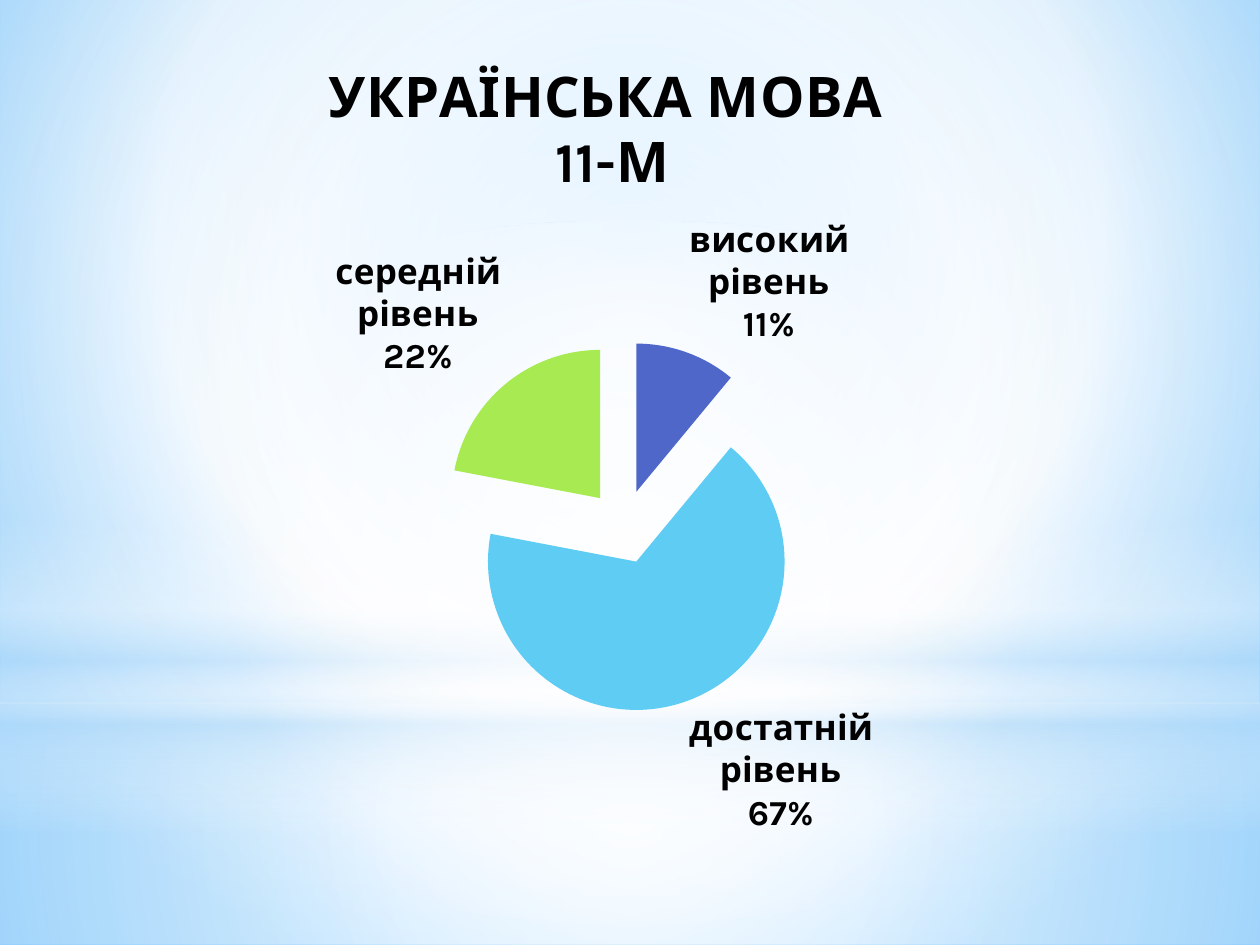
from dataclasses import dataclass

from lxml.etree import SubElement
from pptx import Presentation
from pptx.chart.data import CategoryChartData
from pptx.dml.color import RGBColor
from pptx.enum.chart import XL_CHART_TYPE, XL_LABEL_POSITION
from pptx.enum.shapes import MSO_SHAPE
from pptx.oxml.ns import qn
from pptx.util import Inches, Pt


@dataclass(frozen=True)
class Theme:
    font: str = "Karla"
    ink: str = "000000"
    white: str = "FFFFFF"
    haze: str = "B4DCFA"
    sky: str = "9ED5FF"
    edge: str = "5BB9FF"
    slices: tuple = ("4E67C8", "5ECCF3", "A7EA52")
    base_size: int = 10
    label_size: int = 20
    title_size: int = 32


def add_value(parent, tag, value):
    return SubElement(parent, qn(tag), val=str(value))


class SlideBuilder:
    """Holds the theme and the current slide and draws each kind of element."""

    def __init__(self, theme, slide):
        self.theme = theme
        self.slide = slide

    def style(self, font, size, bold):
        font.name = self.theme.font
        font.size = Pt(size)
        font.bold = bold
        font.color.rgb = RGBColor.from_string(self.theme.ink)

    def paint(self, fill, owner, stops, focus=None):
        fill.gradient()
        gradient = owner.find(".//" + qn("a:gradFill"))
        for child in list(gradient):
            gradient.remove(child)
        stop_list = SubElement(gradient, qn("a:gsLst"))
        for position, color, opacity in stops:
            stop = SubElement(stop_list, qn("a:gs"), pos=str(position * 1000))
            tone = add_value(stop, "a:srgbClr", color)
            if opacity < 100:
                add_value(tone, "a:alpha", opacity * 1000)
        if focus:
            sweep = SubElement(gradient, qn("a:path"), path="circle")
            edges = {side: str(inset * 1000) for side, inset in zip("ltrb", focus)}
            SubElement(sweep, qn("a:fillToRect"), **edges)
        else:
            SubElement(gradient, qn("a:lin"), ang="5400000", scaled="0")

    def background(self, stops, focus):
        self.paint(self.slide.background.fill, self.slide.element, stops, focus)

    def glow(self, outline, top, height, stops, focus=None):
        band = self.slide.shapes.add_shape(
            outline, Inches(0), Inches(top), Inches(10), Inches(height))
        band.shadow.inherit = False
        band.line.fill.background()
        self.paint(band.fill, band.element, stops, focus)

    def pie(self, box, title_lines, levels, plot_box):
        data = CategoryChartData()
        data.categories = list(levels)
        data.add_series("Series 1", list(levels.values()))
        chart = self.slide.shapes.add_chart(
            XL_CHART_TYPE.PIE, *map(Inches, box), data).chart
        self.style(chart.font, self.theme.base_size, False)
        chart.has_legend = False
        self.chart_title(chart, title_lines)
        plot = chart.plots[0]
        plot.vary_by_categories = True
        series = plot.series[0]
        for index, color in enumerate(self.theme.slices):
            fill = series.points[index].format.fill
            fill.solid()
            fill.fore_color.rgb = RGBColor.from_string(color)
        explosion = add_value(series._element, "c:explosion", 25)
        series._element.find(qn("c:dPt")).addprevious(explosion)
        self.pie_labels(series)
        self.place_plot(chart, plot_box)

    def chart_title(self, chart, lines):
        chart.has_title = True
        frame = chart.chart_title.text_frame
        chart.chart_title.include_in_layout = False
        for index, line in enumerate(lines):
            paragraph = frame.add_paragraph() if index else frame.paragraphs[0]
            run = paragraph.add_run()
            run.text = line
            self.style(run.font, self.theme.title_size, True)

    def pie_labels(self, series):
        labels = series.data_labels
        self.style(labels.font, self.theme.label_size, True)
        labels.show_value = False
        labels.show_category_name = True
        labels.show_percentage = True
        labels.number_format = "0%"
        labels.number_format_is_linked = False
        labels.position = XL_LABEL_POSITION.OUTSIDE_END
        separator = SubElement(labels._element, qn("c:separator"))
        separator.text = "\n"
        labels._element.find(qn("c:showBubbleSize")).addnext(separator)

    def place_plot(self, chart, plot_box):
        area = chart.element.find(".//" + qn("c:plotArea"))
        for old in area.findall(qn("c:layout")):
            area.remove(old)
        layout = SubElement(area, qn("c:layout"))
        area.insert(0, layout)
        manual = SubElement(layout, qn("c:manualLayout"))
        add_value(manual, "c:layoutTarget", "inner")
        for mode in ("xMode", "yMode"):
            add_value(manual, "c:" + mode, "edge")
        for name, value in zip("xywh", plot_box):
            add_value(manual, "c:" + name, value)


def main():
    presentation = Presentation()
    presentation.slide_width, presentation.slide_height = Inches(10), Inches(7.5)
    theme = Theme()
    slide = presentation.slides.add_slide(presentation.slide_layouts[6])
    builder = SlideBuilder(theme, slide)
    white, haze = theme.white, theme.haze
    center = (50, 50, 50, 50)
    builder.background(
        [(0, theme.sky, 100), (60, white, 100), (100, theme.edge, 100)],
        (20, 10, 20, 60))
    builder.glow(MSO_SHAPE.RECTANGLE, 5.58, 1.92,
                 [(0, white, 91), (37, white, 76), (100, haze, 79)], center)
    builder.glow(MSO_SHAPE.RECTANGLE, 0, 5.58,
                 [(0, white, 89), (48, white, 62), (100, haze, 79)], center)
    builder.glow(MSO_SHAPE.RECTANGLE, 4.12, 2.5,
                 [(0, white, 0), (29, white, 30), (45, haze, 40),
                  (55, white, 26), (65, haze, 60), (100, white, 0)])
    builder.glow(MSO_SHAPE.OVAL, 1.75, 5.58,
                 [(0, white, 100), (56, white, 0)], center)
    builder.pie(
        (0.51, 0.29, 8.71, 6.54),
        ("УКРАЇНСЬКА МОВА ", "11-М"),
        {"високий рівень": 11, "достатній рівень": 67, "середній рівень": 22},
        (0.34, 0.37, 0.34, 0.45))
    presentation.save("out.pptx")


if __name__ == "__main__":
    main()
